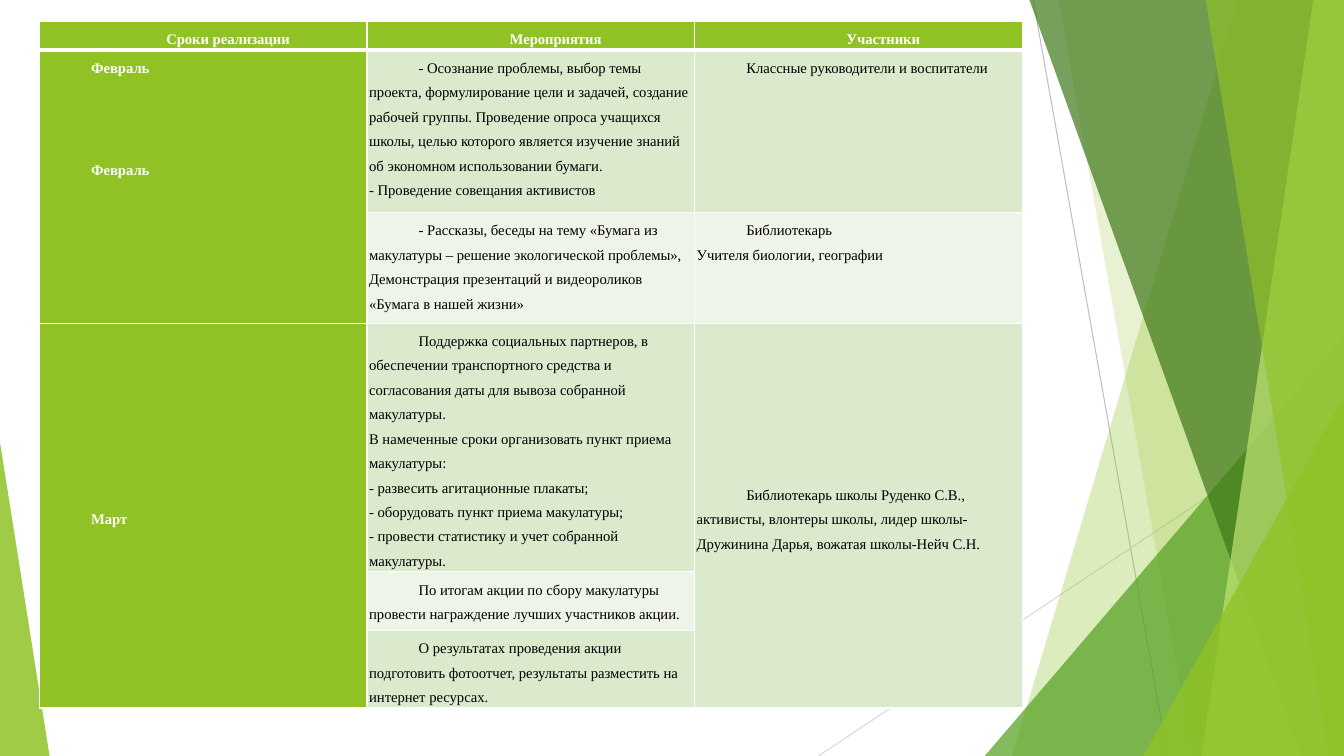
from lxml import etree
from pptx import Presentation
from pptx.dml.color import RGBColor
from pptx.enum.shapes import MSO_CONNECTOR, MSO_SHAPE
from pptx.enum.text import MSO_ANCHOR, PP_ALIGN
from pptx.oxml.ns import qn
from pptx.util import Pt

STRAIGHT = MSO_CONNECTOR.STRAIGHT
TRIANGLE = MSO_SHAPE.ISOSCELES_TRIANGLE
TOP, MIDDLE = MSO_ANCHOR.TOP, MSO_ANCHOR.MIDDLE
LEFT, CENTER = PP_ALIGN.LEFT, PP_ALIGN.CENTER

SLIDE_W, SLIDE_H = 960, 540
LIME, WHITE, BLACK = "90C226", "FFFFFF", "000000"
DARK_BAND, LIGHT_BAND = "DBE9CD", "EEF4E8"
FONT = "Times New Roman"
SPACE_AFTER = 6.8
MONTH_GAP = 55.2

COLUMN_W = 234
ROW_HEIGHTS = [18.8, 116, 79, 152.6, 42, 55]
HEADERS = ["Сроки реализации", "Мероприятия", "Участники"]
# first row, last row, paragraphs, anchor
MONTHS = [(1, 2, ["Февраль", "Февраль"], TOP), (3, 5, ["Март"], MIDDLE)]
ACTIVITIES = [
    ["- Осознание проблемы, выбор темы проекта, формулирование цели и задачей, "
     "создание рабочей группы. Проведение опроса учащихся школы, целью которого "
     "является изучение знаний об экономном использовании бумаги.",
     "- Проведение совещания активистов"],
    ["- Рассказы, беседы на тему «Бумага из макулатуры – решение экологической проблемы»,",
     "Демонстрация презентаций и видеороликов «Бумага в нашей жизни»"],
    ["Поддержка социальных партнеров, в обеспечении транспортного средства и "
     "согласования даты для вывоза собранной макулатуры.",
     "В намеченные сроки организовать пункт приема макулатуры:",
     "- развесить агитационные плакаты;",
     "- оборудовать пункт приема макулатуры;",
     "- провести статистику и учет собранной макулатуры."],
    ["По итогам акции по сбору макулатуры провести награждение лучших участников акции."],
    ["О результатах проведения акции подготовить фотоотчет, результаты разместить "
     "на интернет ресурсах."],
]
PARTICIPANTS = [
    (1, 1, ["Классные руководители и воспитатели"], TOP, SPACE_AFTER),
    (2, 2, ["Библиотекарь", "Учителя биологии, географии"], TOP, SPACE_AFTER),
    (3, 5, ["Библиотекарь школы Руденко С.В., активисты, влонтеры школы, лидер "
            "школы-Дружинина Дарья, вожатая школы-Нейч С.Н."], MIDDLE, 0),
]


def rgb(value):
    return RGBColor.from_string(value)


def paint(shape, color, opacity):
    shape.shadow.inherit = False
    shape.line.fill.background()
    shape.fill.solid()
    shape.fill.fore_color.rgb = rgb(color)
    tint = shape.element.spPr.find(qn("a:solidFill"))[0]
    etree.SubElement(tint, qn("a:alpha")).set("val", str(opacity * 1000))


def add_ray(slide, start, end, color):
    ray = slide.shapes.add_connector(STRAIGHT, *map(Pt, (*start, *end)))
    ray.line.color.rgb = rgb(color)
    ray.line.width = Pt(0.75)
    etree.SubElement(ray.element.spPr, qn("a:effectLst"))


def add_shard(slide, top_x, bottom_x, color, opacity):
    """Full-height band from a slanted left edge to the right side of the slide."""
    builder = slide.shapes.build_freeform(Pt(top_x), Pt(-0.7), scale=1.0)
    corners = [(SLIDE_W, -0.7), (SLIDE_W, SLIDE_H), (bottom_x, SLIDE_H)]
    builder.add_line_segments([(Pt(x), Pt(y)) for x, y in corners], close=True)
    paint(builder.convert_to_shape(), color, opacity)


def add_corner(slide, left, top, width, apex, color, opacity):
    """Triangle standing on the bottom edge, apex 0 at its left and 1 at its right."""
    corner = slide.shapes.add_shape(
        TRIANGLE, Pt(left), Pt(top), Pt(width), Pt(SLIDE_H - top))
    corner.adjustments[0] = apex
    paint(corner, color, opacity)


def add_backdrop(slide):
    add_ray(slide, (738, 0), (834, SLIDE_H), "BFBFBF")
    add_ray(slide, (SLIDE_W, 290), (584.6, SLIDE_H), "D9D9D9")
    add_shard(slide, 884.2, 722.9, LIME, 30)
    add_shard(slide, 756, 851.8, LIME, 20)
    add_corner(slide, 703.4, 240, 256.6, 1, "54A021", 72)
    add_shard(slide, 735.1, 929.5, "3F7819", 70)
    add_shard(slide, 938.2, 858.2, "C0E474", 70)
    add_shard(slide, 861.1, 949, LIME, 65)
    add_corner(slide, 816.6, 283, 143.4, 1, LIME, 80)
    add_corner(slide, 0, 316, 35.4, 0, LIME, 85)


def style_cell(cell, row, color):
    widths = {"lnL": 1, "lnR": 1, "lnT": 3 if row == 1 else 1, "lnB": 3 if row == 0 else 1}
    properties = cell._tc.get_or_add_tcPr()
    for side, width in widths.items():
        border = etree.SubElement(properties, qn(f"a:{side}"), w=str(Pt(width)))
        solid = etree.SubElement(border, qn("a:solidFill"))
        etree.SubElement(solid, qn("a:srgbClr"), val=WHITE)
    cell.fill.solid()
    cell.fill.fore_color.rgb = rgb(color)
    cell.margin_left = cell.margin_right = Pt(1.5)
    cell.margin_top = cell.margin_bottom = Pt(1.5)


def write_paragraph(paragraph, lines, color, bold, align=LEFT, space_after=SPACE_AFTER):
    paragraph.alignment = align
    paragraph.line_spacing = 1.5
    paragraph.space_after = Pt(space_after)
    properties = paragraph._p.get_or_add_pPr()
    properties.set("marL", "0")
    properties.set("indent", str(Pt(35.4)))
    for number, line in enumerate(lines):
        if number:
            paragraph.add_line_break()
        run = paragraph.add_run()
        run.text = line
        run.font.name = FONT
        run.font.size = Pt(10.5)
        run.font.bold = bold
        run.font.color.rgb = rgb(color)


def merge_rows(table, column, first, last, anchor):
    cell = table.cell(first, column)
    if last > first:
        cell.merge(table.cell(last, column))
    cell.vertical_anchor = anchor
    return cell.text_frame


def add_plan(slide, left, top):
    table = slide.shapes.add_table(
        len(ROW_HEIGHTS), len(HEADERS), Pt(left), Pt(top),
        Pt(COLUMN_W * len(HEADERS)), Pt(sum(ROW_HEIGHTS))).table
    for column in table.columns:
        column.width = Pt(COLUMN_W)
    for row, height in enumerate(ROW_HEIGHTS):
        table.rows[row].height = Pt(height)
        band = DARK_BAND if row % 2 else LIGHT_BAND
        for column in range(len(HEADERS)):
            style_cell(table.cell(row, column), row, LIME if row == 0 or column == 0 else band)

    for column, header in enumerate(HEADERS):
        heading = table.cell(0, column).text_frame.paragraphs[0]
        write_paragraph(heading, [header], WHITE, True, CENTER)
    for first, last, months, anchor in MONTHS:
        frame = merge_rows(table, 0, first, last, anchor)
        for number, month in enumerate(months):
            paragraph = frame.add_paragraph() if number else frame.paragraphs[0]
            gap = MONTH_GAP if number < len(months) - 1 else SPACE_AFTER
            write_paragraph(paragraph, [month], WHITE, True, space_after=gap)
    for row, activity in enumerate(ACTIVITIES, start=1):
        write_paragraph(table.cell(row, 1).text_frame.paragraphs[0], activity, BLACK, False)
    for first, last, people, anchor, gap in PARTICIPANTS:
        frame = merge_rows(table, 2, first, last, anchor)
        write_paragraph(frame.paragraphs[0], people, BLACK, False, space_after=gap)


def main():
    deck = Presentation()
    deck.slide_width, deck.slide_height = Pt(SLIDE_W), Pt(SLIDE_H)
    slide = deck.slides.add_slide(deck.slide_layouts[6])
    add_backdrop(slide)
    add_plan(slide, 28.2, 15.4)
    deck.save("out.pptx")


if __name__ == "__main__":
    main()
